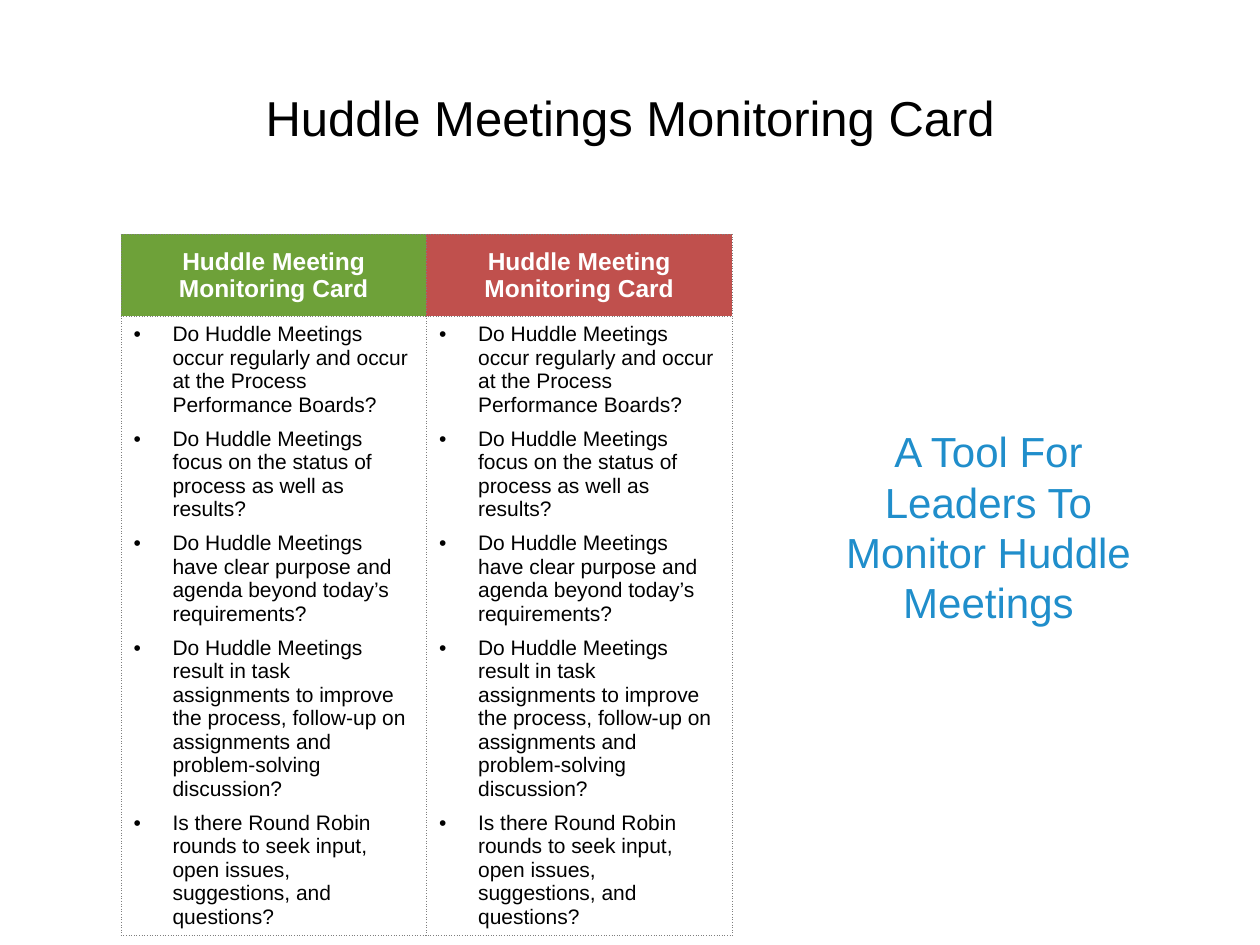
from lxml import etree
from pptx import Presentation
from pptx.dml.color import RGBColor
from pptx.enum import text
from pptx.oxml.ns import qn
from pptx.util import Inches, Pt

FONT = "Arial"
CARD_HEADING = "Huddle Meeting\vMonitoring Card"
CARD_COLORS = ["6EA139", "C0504D"]
QUESTIONS = [
    "Do Huddle Meetings occur regularly and occur at the Process Performance Boards?",
    "Do Huddle Meetings focus on the status of process as well as results?",
    "Do Huddle Meetings have clear purpose and agenda beyond today’s requirements?",
    "Do Huddle Meetings result in task assignments to improve the process, "
    "follow-up on assignments and problem-solving discussion?",
    "Is there Round Robin rounds to seek input, open issues, suggestions, and questions?",
]


def rgb(value):
    return RGBColor.from_string(value)


def format_paragraph(paragraph, size, color, bold=False, align=text.PP_ALIGN.CENTER):
    paragraph.alignment = align
    font = paragraph.font
    font.name, font.size, font.bold = FONT, Pt(size), bold
    font.color.rgb = rgb(color)


def add_bullet(paragraph, indent):
    properties = paragraph._p.get_or_add_pPr()
    properties.set("marL", str(indent))
    properties.set("indent", str(-indent))
    etree.SubElement(properties, qn("a:buFont"), typeface=FONT)
    etree.SubElement(properties, qn("a:buChar"), char="•")


def add_dotted_borders(cell, color="7F7F7F", width=0.25):
    properties = cell._tc.get_or_add_tcPr()
    for side in ("lnL", "lnR", "lnT", "lnB"):
        line = etree.SubElement(properties, qn(f"a:{side}"), w=str(Pt(width)))
        fill = etree.SubElement(line, qn("a:solidFill"))
        etree.SubElement(fill, qn("a:srgbClr"), val=color)
        etree.SubElement(line, qn("a:prstDash"), val="sysDot")


def place_title(slide, left, top, width, height):
    title = slide.shapes.title
    title.left, title.top, title.width, title.height = left, top, width, height
    title.text_frame.text = "Huddle Meetings Monitoring Card"
    title.text_frame.vertical_anchor = text.MSO_ANCHOR.MIDDLE
    format_paragraph(title.text_frame.paragraphs[0], 28, "000000")


def fill_heading(cell, color):
    add_dotted_borders(cell)
    cell.fill.solid()
    cell.fill.fore_color.rgb = rgb(color)
    cell.vertical_anchor = text.MSO_ANCHOR.MIDDLE
    cell.text_frame.text = CARD_HEADING
    format_paragraph(cell.text_frame.paragraphs[0], 14, "FFFFFF", bold=True)


def fill_questions(cell):
    add_dotted_borders(cell)
    cell.fill.background()
    cell.text_frame.text = "\n".join(QUESTIONS)
    for question in cell.text_frame.paragraphs:
        add_bullet(question, Inches(0.31))
        question.space_after = Pt(6)
        format_paragraph(question, 12, "000000", align=text.PP_ALIGN.LEFT)


def add_cards(slide, left, top, width, height):
    """Two equal monitoring cards side by side in one table."""
    heading_height = Inches(0.65)
    cards = slide.shapes.add_table(2, len(CARD_COLORS), left, top, width, height).table
    cards.horz_banding = False
    cards.rows[0].height = heading_height
    cards.rows[1].height = height - heading_height
    for column, color in enumerate(CARD_COLORS):
        fill_heading(cards.cell(0, column), color)
        fill_questions(cards.cell(1, column))


def add_purpose(slide, left, top, width, height):
    purpose = slide.shapes.add_textbox(left, top, width, height).text_frame
    purpose.word_wrap = True
    purpose.auto_size = text.MSO_AUTO_SIZE.SHAPE_TO_FIT_TEXT
    purpose.text = "A Tool For Leaders To Monitor Huddle Meetings"
    format_paragraph(purpose.paragraphs[0], 24, "208ECB")


def main():
    deck = Presentation()
    deck.slide_width, deck.slide_height = Inches(10), Inches(7.5)
    slide = deck.slides.add_slide(deck.slide_layouts[5])
    place_title(slide, Inches(0.5), Inches(0.3), Inches(9), Inches(1.25))
    add_cards(slide, Inches(0.96), Inches(1.86), Inches(4.85), Inches(4.99))
    add_purpose(slide, Inches(6.48), Inches(3.33), Inches(2.73), Inches(1.72))
    deck.save("out.pptx")


if __name__ == "__main__":
    main()
